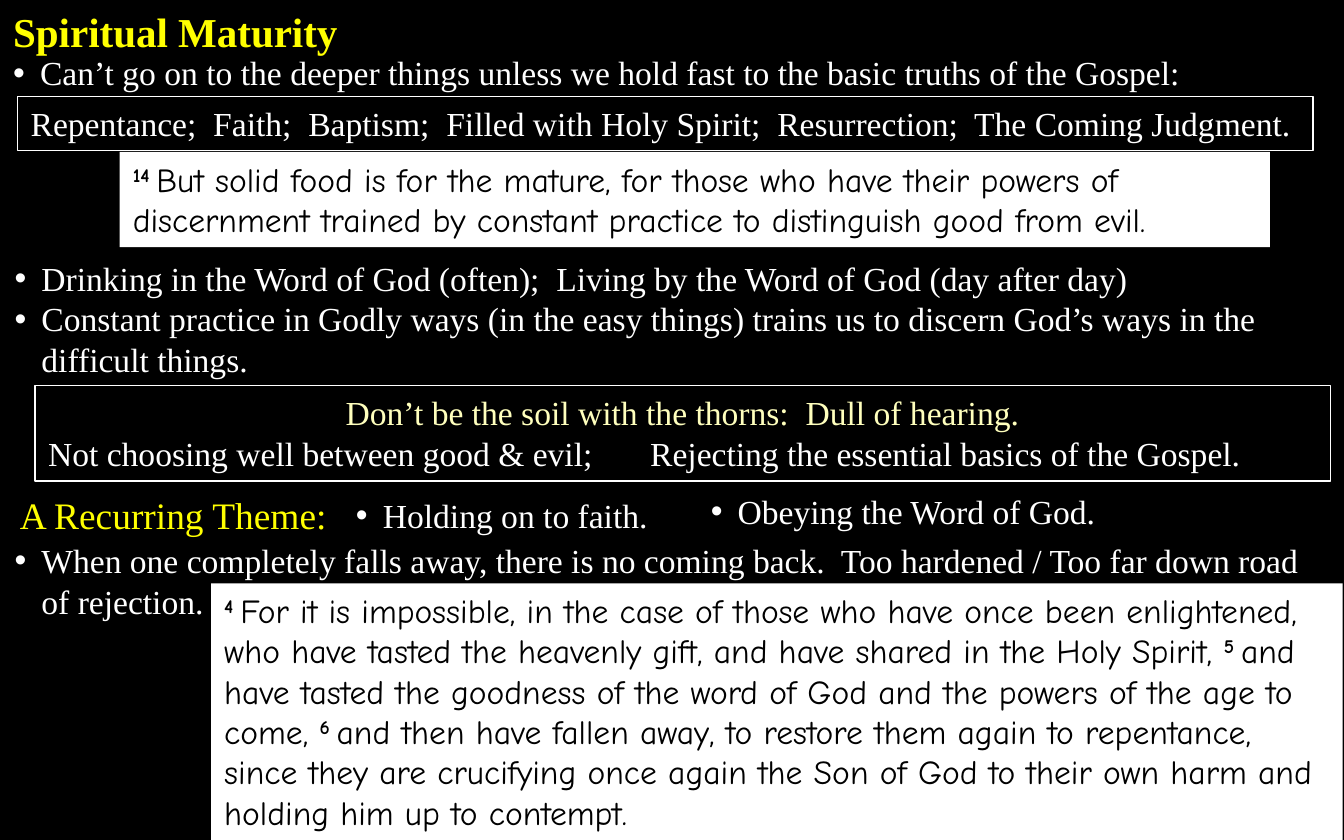
"""Build the Spiritual Maturity study slide."""
from lxml.etree import SubElement
from pptx import Presentation
from pptx.dml.color import RGBColor
from pptx.enum.shapes import MSO_SHAPE
from pptx.enum.text import MSO_ANCHOR, PP_ALIGN
from pptx.oxml.ns import qn
from pptx.util import Inches, Pt

COLORS = {"black": "000000", "white": "FFFFFF", "yellow": "FFFF00", "cream": "FFFFBD"}
SERIF, HAND = "Times New Roman", "Comic Neue"
INDENT = 0.2

FOOD_VERSE = [
    ("14 ", "But solid food is for the mature, for those who have their powers of "
            "discernment trained by constant practice to distinguish good from evil."),
]
FALLING_VERSES = [
    ("4 ", "For it is impossible, in the case of those who have once been enlightened, "
           "who have tasted the heavenly gift, and have shared in the Holy Spirit, "),
    ("5 ", "and have tasted the goodness of the word of God and the powers of the age "
           "to come, "),
    ("6 ", "and then have fallen away, to restore them again to repentance, since they "
           "are crucifying once again the Son of God to their own harm and holding him "
           "up to contempt."),
]
BASICS = ("Repentance;  Faith;  Baptism;  Filled with Holy Spirit;  Resurrection;  "
          "The Coming Judgment.")

BOXES = [
    ("verse", (0.89, 1.13, 8.56, 0.71), [(FOOD_VERSE, {})]),
    ("text", (0, 0, 9.96, 0.47),
     [("Spiritual Maturity", {"size": 22, "color": "yellow", "bold": True})]),
    ("frame", (0.13, 0.72, 9.64, 0.4), [(BASICS, {})]),
    ("text", (0, 0.34, 9.99, 0.4),
     [("Can’t go on to the deeper things unless we hold fast to the basic truths of "
       "the Gospel:", {"bullet": True})]),
    ("text", (0.01, 1.87, 9.99, 1.01),
     [("Drinking in the Word of God (often);  Living by the Word of God (day after day)",
       {"bullet": True}),
      ("Constant practice in Godly ways (in the easy things) trains us to discern "
       "God’s ways in the difficult things.", {"bullet": True})]),
    ("frame", (0.26, 2.87, 9.64, 0.71),
     [("Don’t be the soil with the thorns:  Dull of hearing.",
       {"color": "cream", "align": PP_ALIGN.CENTER}),
      ("Not choosing well between good & evil;\tRejecting the essential basics of the "
       "Gospel.", {"tab": 4.48})]),
    ("text", (2.55, 3.63, 2.49, 0.4), [("Holding on to faith.", {"bullet": True})]),
    ("text", (0.05, 3.61, 2.49, 0.44),
     [("A Recurring Theme:", {"size": 20, "color": "yellow"})]),
    ("text", (5.19, 3.6, 3.58, 0.4), [("Obeying the Word of God.", {"bullet": True})]),
    ("verse", (1.57, 4.34, 8.42, 1.92), [(FALLING_VERSES, {})]),
    ("text", (0.01, 3.97, 9.98, 0.71),
     [("When one completely falls away, there is no coming back.  Too hardened / Too "
       "far down road of rejection.", {"bullet": True})]),
]


def rgb(name):
    return RGBColor.from_string(COLORS[name])


def add_text(p, text, size=18, color="white", font=SERIF, bold=False, raised=False,
             align=PP_ALIGN.LEFT, bullet=False, tab=None):
    p.alignment = align
    pPr = p._p.get_or_add_pPr()
    if bullet:
        pPr.set("marL", str(Inches(INDENT)))
        pPr.set("indent", str(Inches(-INDENT)))
        SubElement(pPr, qn("a:buFont"), typeface="Arial")
        SubElement(pPr, qn("a:buChar"), char="•")
    if tab:
        tabs = SubElement(pPr, qn("a:tabLst"))
        SubElement(tabs, qn("a:tab"), pos=str(Inches(tab)), algn="l")
    r = p.add_run()
    r.text = text
    r.font.size, r.font.name, r.font.bold = Pt(size), font, bold
    r.font.color.rgb = rgb(color)
    if raised:
        r._r.get_or_add_rPr().set("baseline", "30000")


def add_box(s, kind, at, paragraphs):
    place = [Inches(v) for v in at]
    if kind == "text":
        sp = s.shapes.add_textbox(*place)
    else:
        sp = s.shapes.add_shape(MSO_SHAPE.RECTANGLE, *place)
        sp.shadow.inherit = False
        if kind == "verse":
            sp.fill.solid()
            sp.fill.fore_color.rgb = rgb("white")
            sp.line.fill.background()
        else:
            sp.fill.background()
            sp.line.color.rgb = rgb("white")
            sp.line.width = Pt(0.75)
    tf = sp.text_frame
    tf.word_wrap = True
    tf.vertical_anchor = MSO_ANCHOR.TOP
    for i, (content, fmt) in enumerate(paragraphs):
        p = tf.add_paragraph() if i else tf.paragraphs[0]
        if kind == "verse":
            for number, words in content:
                add_text(p, number, color="black", font=HAND, bold=True, raised=True)
                add_text(p, words, color="black", font=HAND)
        else:
            add_text(p, content, **fmt)


def main():
    prs = Presentation()
    prs.slide_width, prs.slide_height = Inches(10), Inches(6.25)
    s = prs.slides.add_slide(prs.slide_layouts[6])
    s.background.fill.solid()
    s.background.fill.fore_color.rgb = rgb("black")
    for kind, at, paragraphs in BOXES:
        add_box(s, kind, at, paragraphs)
    prs.save("out.pptx")


if __name__ == "__main__":
    main()
